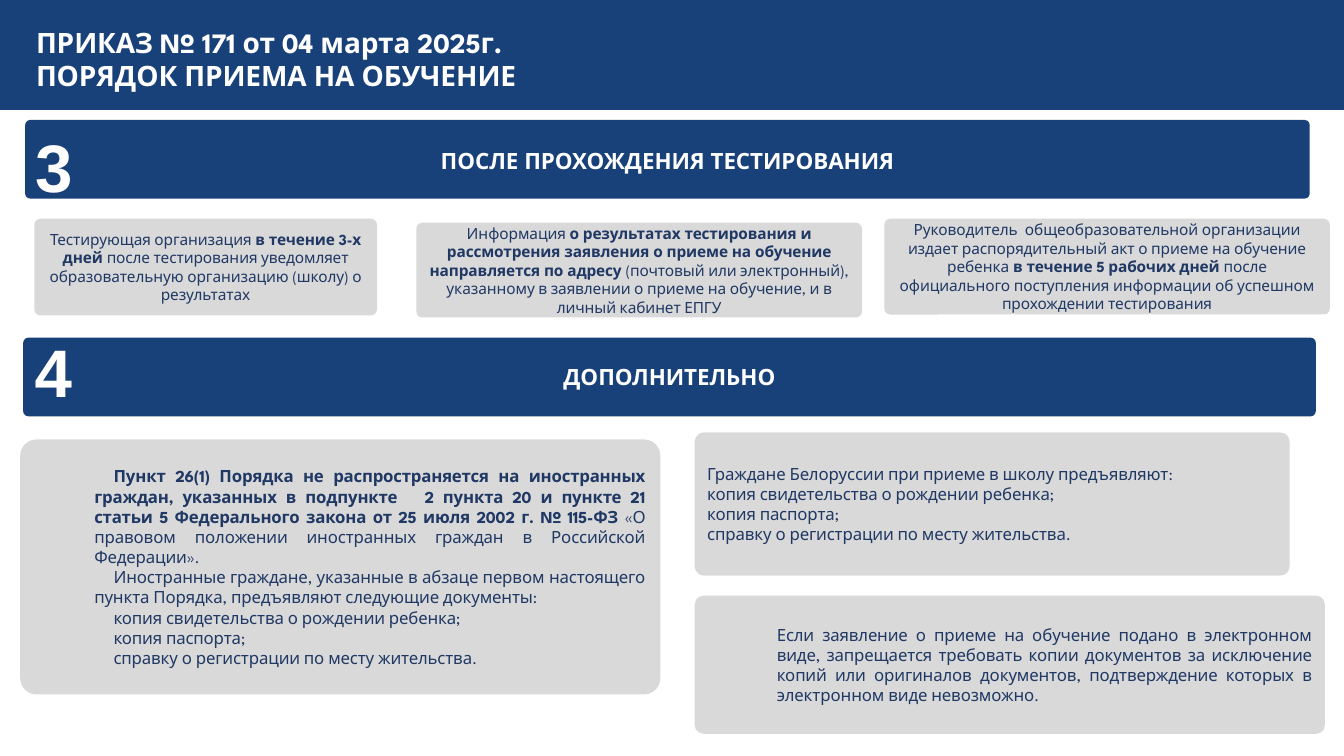
from pptx import Presentation
from pptx.dml.color import RGBColor
from pptx.enum.shapes import MSO_SHAPE as Shape
from pptx.enum.text import MSO_ANCHOR as Anchor, PP_ALIGN as Align
from pptx.util import Inches, Pt

NAVY = RGBColor(0x18, 0x41, 0x79)
INK = RGBColor(0x20, 0x38, 0x64)
GREY = RGBColor(0xD9, 0xD9, 0xD9)
WHITE = RGBColor(0xFF, 0xFF, 0xFF)
FONT = "League Spartan"
CORNER = 0.064


def add_panel(page, box, fill, kind=Shape.ROUNDED_RECTANGLE):
    """Flat filled panel; returns its text frame."""
    panel = page.shapes.add_shape(kind, *map(Inches, box))
    panel.shadow.inherit = False
    panel.fill.solid()
    panel.fill.fore_color.rgb = fill
    panel.line.fill.background()
    if kind == Shape.ROUNDED_RECTANGLE:
        panel.adjustments[0] = CORNER
    frame = panel.text_frame
    frame.word_wrap = True
    frame.vertical_anchor = Anchor.MIDDLE
    return frame


def add_span(para, text, size, color, bold=False, font=FONT, tight=False):
    span = para.add_run()
    span.text = text
    span.font.size = Pt(size)
    span.font.name = font
    span.font.bold = bold
    span.font.color.rgb = color
    if tight:
        span.font._element.set("spc", "-10")


def add_label(page, box):
    """Transparent text box; returns its first paragraph."""
    frame = page.shapes.add_textbox(*map(Inches, box)).text_frame
    frame.word_wrap = True
    return frame.paragraphs[0]


def add_header(page, box):
    left, top, width, height = box
    add_panel(page, box, NAVY, Shape.RECTANGLE)
    para = add_label(page, (left + 0.26, top + 0.2, 5.06, 0.78))
    add_span(para, "ПРИКАЗ № 171 от 04 марта 2025г.", 20, WHITE, True, tight=True)
    para.add_line_break()
    add_span(para, "ПОРЯДОК ПРИЕМА НА ОБУЧЕНИЕ", 20, WHITE, True, tight=True)


def add_section(page, box, number, title, number_shift, number_align):
    """Band with a centred title and a large number at its left end."""
    left, top, width, height = box
    para = add_panel(page, box, NAVY).paragraphs[0]
    para.alignment = Align.CENTER
    for index, word in enumerate(title.split()):
        if index:
            add_span(para, " ", 18, WHITE, font="Calibri")
        add_span(para, word, 16, WHITE, True)
    para = add_label(page, (left, top + number_shift, 0.6, 0.9))
    para.alignment = number_align
    add_span(para, number, 48, WHITE, True, font="Arial")


def add_card(page, box, paragraphs, size, align, margin=0, indent=0):
    """Grey card; each paragraph is a list of (text, bold) spans."""
    frame = add_panel(page, box, GREY)
    for index, spans in enumerate(paragraphs):
        para = frame.add_paragraph() if index else frame.paragraphs[0]
        para.alignment = align
        props = para._p.get_or_add_pPr()
        props.set("marL", str(Inches(margin)))
        props.set("indent", str(Inches(indent)))
        for text, bold in spans:
            add_span(para, text, size, INK, bold, tight=True)


DOCUMENTS = [[(text, False)] for text in (
    "копия свидетельства о рождении ребенка;",
    "копия паспорта;",
    "справку о регистрации по месту жительства.",
)]

STEPS = [
    ((0.34, 2.17, 3.4, 0.96), [
        ("Тестирующая организация ", False),
        ("в течение 3-х дней ", True),
        ("после тестирования уведомляет образовательную организацию (школу) "
         "о результатах", False)]),
    ((4.13, 2.21, 4.42, 0.94), [
        ("Информация ", False),
        ("о результатах тестирования и рассмотрения заявления о приеме "
         "на обучение направляется по адресу ", True),
        ("(почтовый или электронный), указанному в заявлении о приеме "
         "на обучение, и в личный кабинет ЕПГУ", False)]),
    ((8.77, 2.17, 4.42, 0.95), [
        ("Руководитель  общеобразовательной организации издает "
         "распорядительный акт о приеме на обучение ребенка ", False),
        ("в течение 5 рабочих дней ", True),
        ("после официального поступления информации об успешном "
         "прохождении тестирования", False)]),
]

FOREIGNERS = [
    [("Пункт 26(1) Порядка не распространяется на иностранных граждан, "
      "указанных в подпункте   2 пункта 20 и пункте 21 статьи 5 "
      "Федерального закона от 25 июля 2002 г. № 115-ФЗ", True),
     (" «О правовом положении иностранных граждан в Российской "
      "Федерации».", False)],
    [("Иностранные граждане, указанные в абзаце первом настоящего пункта "
      "Порядка, предъявляют следующие документы: ", False)],
] + DOCUMENTS

BELARUS = [
    [("Граждане Белоруссии при приеме в школу предъявляют:", False)],
] + DOCUMENTS

ELECTRONIC = [
    [("Если заявление о приеме на обучение подано в электронном виде, "
      "запрещается требовать копии документов за исключение копий или "
      "оригиналов документов, подтверждение которых в электронном виде "
      "невозможно.", False)],
]


def build_page(page):
    add_header(page, (0, 0, 13.33, 1.09))

    # Section 3: after the test
    add_section(page, (0.25, 1.19, 12.74, 0.78), "3",
                "ПОСЛЕ ПРОХОЖДЕНИЯ ТЕСТИРОВАНИЯ", 0, Align.LEFT)
    for box, spans in STEPS:
        add_card(page, box, [spans], 11, Align.CENTER)

    # Section 4: additional rules
    add_section(page, (0.23, 3.35, 12.82, 0.78), "4", "ДОПОЛНИТЕЛЬНО",
                -0.12, Align.CENTER)
    add_card(page, (0.2, 4.36, 6.35, 2.53), FOREIGNERS, 12, Align.JUSTIFY,
             margin=0.59, indent=0.19)
    add_card(page, (6.89, 4.29, 5.9, 1.42), BELARUS, 12, Align.JUSTIFY)
    add_card(page, (6.89, 5.91, 6.25, 1.37), ELECTRONIC, 12, Align.JUSTIFY,
             margin=0.69)


def main():
    deck = Presentation()
    deck.slide_width = Inches(13.33)
    deck.slide_height = Inches(7.5)
    build_page(deck.slides.add_slide(deck.slide_layouts[6]))
    deck.save("out.pptx")


if __name__ == "__main__":
    main()
